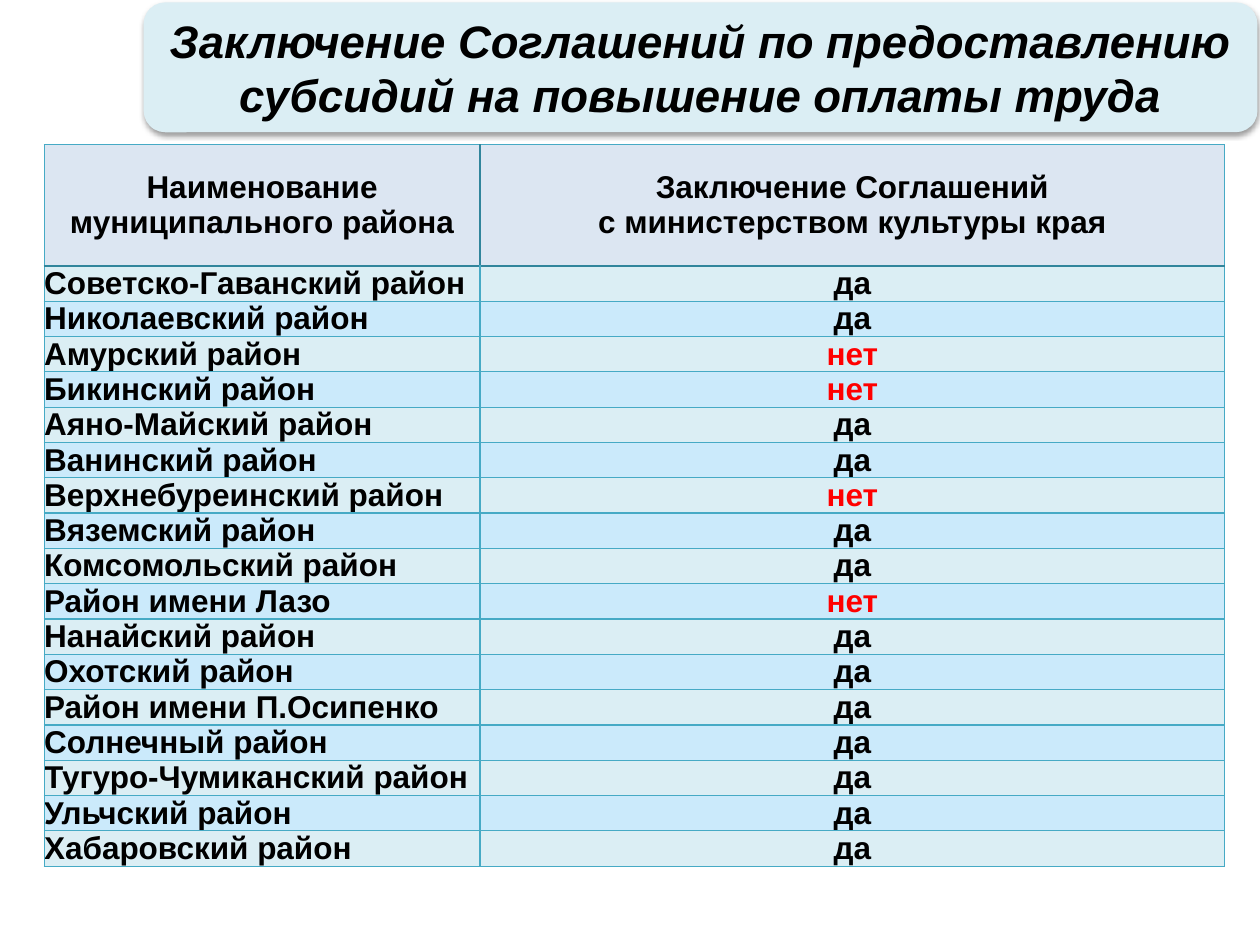
import pptx
import pptx.dml.color
import pptx.enum.shapes
import pptx.enum.text
import pptx.oxml
import pptx.oxml.ns
import pptx.util
from lxml import etree

Pt = pptx.util.Pt
ALIGN = pptx.enum.text.PP_ALIGN
MIDDLE = pptx.enum.text.MSO_ANCHOR.MIDDLE

COLORS = {
    "black": "000000",
    "red": "FF0000",
    "title": "DBEEF4",
    "header": "DCE6F2",
    "odd": "DBEEF4",
    "even": "CBEAFB",
    "border": "46AAC5",
    "header border": "31859C",
}
FONT = "Arial"
HEADER = ["Наименование муниципального района",
          "Заключение Соглашений\vс министерством культуры края"]
DISTRICTS = [
    "Советско-Гаванский район", "Николаевский район", "Амурский район",
    "Бикинский район", "Аяно-Майский район", "Ванинский район",
    "Верхнебуреинский район", "Вяземский район", "Комсомольский район",
    "Район имени Лазо", "Нанайский район", "Охотский район",
    "Район имени П.Осипенко", "Солнечный район", "Тугуро-Чумиканский район",
    "Ульчский район", "Хабаровский район",
]
WITHOUT_AGREEMENT = {"Амурский район", "Бикинский район",
                     "Верхнебуреинский район", "Район имени Лазо"}
COLUMN_WIDTHS = [249.1, 425.5]
HEADER_HEIGHT = 69.1
ROW_HEIGHT = 20.2


def rgb(name):
    return pptx.dml.color.RGBColor.from_string(COLORS[name])


def write(frame, text, size, align, color="black", italic=False):
    para = frame.paragraphs[0]
    para.alignment = align
    for index, line in enumerate(text.split("\v")):
        if index:
            para.add_line_break()
        span = para.add_run()
        span.text = line
        span.font.name = FONT
        span.font.size = Pt(size)
        span.font.bold = True
        span.font.italic = italic
        span.font.color.rgb = rgb(color)


def clear_margins(holder):
    holder.margin_left = holder.margin_right = 0
    holder.margin_top = holder.margin_bottom = 0
    holder.vertical_anchor = MIDDLE


def add_shadow(shape):
    """Give the shape a soft shadow straight below it."""
    shape.shadow.inherit = False
    effects = shape.element.spPr.find(pptx.oxml.ns.qn("a:effectLst"))
    effects.append(pptx.oxml.parse_xml(
        f'<a:outerShdw {pptx.oxml.ns.nsdecls("a")} blurRad="{Pt(3.1)}" '
        f'dist="{Pt(1.6)}" dir="5400000" rotWithShape="0">'
        f'<a:srgbClr val="{COLORS["black"]}"><a:alpha val="38000"/></a:srgbClr>'
        '</a:outerShdw>'))


def add_title(page, text):
    box = page.shapes.add_shape(
        pptx.enum.shapes.MSO_SHAPE.ROUNDED_RECTANGLE,
        Pt(82.1), Pt(1.4), Pt(636.5), Pt(74.2))
    box.fill.solid()
    box.fill.fore_color.rgb = rgb("title")
    box.line.fill.background()
    add_shadow(box)
    clear_margins(box.text_frame)
    box.text_frame.word_wrap = True
    write(box.text_frame, text, 26, ALIGN.CENTER, italic=True)


def set_borders(cell, strong_sides):
    """Draw all four cell borders, with a darker line on strong_sides."""
    properties = cell._tc.get_or_add_tcPr()
    for index, side in enumerate("LRTB"):
        strong = side in strong_sides
        line = etree.Element(pptx.oxml.ns.qn(f"a:ln{side}"),
                             w=str(Pt(1 if strong else 0.75)))
        fill = etree.SubElement(line, pptx.oxml.ns.qn("a:solidFill"))
        etree.SubElement(fill, pptx.oxml.ns.qn("a:srgbClr"),
                         val=COLORS["header border" if strong else "border"])
        properties.insert(index, line)


def fill_cell(cell, text, fill, align, color="black", strong_sides=""):
    clear_margins(cell)
    cell.fill.solid()
    cell.fill.fore_color.rgb = rgb(fill)
    set_borders(cell, strong_sides)
    write(cell.text_frame, text, 18, align, color)


def add_agreements_table(page):
    height = HEADER_HEIGHT + ROW_HEIGHT * len(DISTRICTS)
    table = page.shapes.add_table(
        len(DISTRICTS) + 1, 2, Pt(25.2), Pt(82.8),
        Pt(sum(COLUMN_WIDTHS)), Pt(height)).table
    for column, width in zip(table.columns, COLUMN_WIDTHS):
        column.width = Pt(width)
    for index, row in enumerate(table.rows):
        row.height = Pt(ROW_HEIGHT if index else HEADER_HEIGHT)

    for column, (text, sides) in enumerate(zip(HEADER, ("RB", "LB"))):
        fill_cell(table.cell(0, column), text, "header", ALIGN.CENTER,
                  strong_sides=sides)
    for index, district in enumerate(DISTRICTS, start=1):
        fill = "odd" if index % 2 else "even"
        sides = "T" if index == 1 else ""
        answer, color = (("нет", "red") if district in WITHOUT_AGREEMENT
                         else ("да", "black"))
        fill_cell(table.cell(index, 0), district, fill, ALIGN.LEFT,
                  strong_sides=sides)
        fill_cell(table.cell(index, 1), answer, fill, ALIGN.CENTER, color, sides)


def main():
    deck = pptx.Presentation()
    deck.slide_width, deck.slide_height = Pt(720), Pt(540)
    page = deck.slides.add_slide(deck.slide_layouts[6])
    add_title(page, "Заключение Соглашений по предоставлению "
                    "субсидий на повышение оплаты труда")
    add_agreements_table(page)
    deck.save("out.pptx")


if __name__ == "__main__":
    main()
